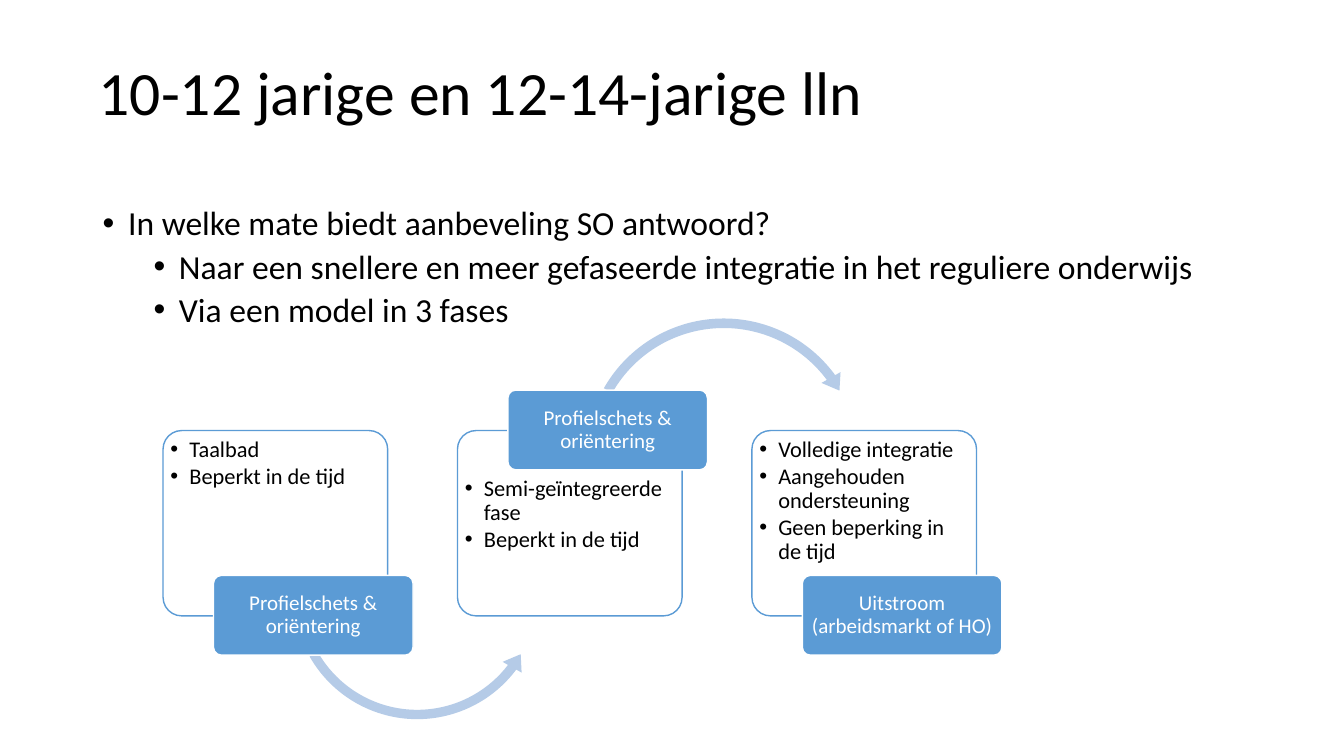
import pptx
import pptx.dml.color
import pptx.enum.shapes
import pptx.enum.text
import pptx.oxml.ns
import pptx.util
from lxml import etree

Cm = pptx.util.Cm
Pt = pptx.util.Pt
SHAPE = pptx.enum.shapes.MSO_SHAPE
ALIGN = pptx.enum.text.PP_ALIGN
ANCHOR = pptx.enum.text.MSO_ANCHOR
qn = pptx.oxml.ns.qn

BLACK = pptx.dml.color.RGBColor(0x00, 0x00, 0x00)
WHITE = pptx.dml.color.RGBColor(0xFF, 0xFF, 0xFF)
BLUE = pptx.dml.color.RGBColor(0x5B, 0x9B, 0xD5)
PALE_BLUE = pptx.dml.color.RGBColor(0xB5, 0xCB, 0xE7)
FONT = "Calibri"

TITLE = "10-12 jarige en 12-14-jarige lln"
QUESTION = "In welke mate biedt aanbeveling SO antwoord?"
ANSWERS = [
    "Naar een snellere en meer gefaseerde integratie in het reguliere onderwijs",
    "Via een model in 3 fases",
]
# Points, label, whether the label sits on top of the card
PHASES = [
    (["Taalbad", "Beperkt in de tijd"], "Profielschets & oriëntering", False),
    (["Semi-geïntegreerde fase", "Beperkt in de tijd"],
     "Profielschets & oriëntering", True),
    (["Volledige integratie", "Aangehouden ondersteuning",
      "Geen beperking in de tijd"], "Uitstroom (arbeidsmarkt of HO)", False),
]
PHASE_PITCH = Cm(7.42)
# Preset, offset from the card it leaves, diameter, adjustments
ARROWS = [
    (SHAPE.LEFT_CIRCULAR_ARROW, Cm(3.13), Cm(0.88), Cm(6.55),
     (0.036, 4.505, 22.26, 90.245, 0.042)),
    (SHAPE.CIRCULAR_ARROW, Cm(3.08), Cm(-2.98), Cm(7.26),
     (0.033, 4.022, 194.223, 125.755, 0.038)),
]


def write(frame, text, size, color=BLACK, align=ALIGN.LEFT, before=0, after=0,
          bullet_indent=None, hanging=0):
    """Add one paragraph, using the frame's first one while it is empty."""
    paragraph = frame.paragraphs[0] if not frame.text else frame.add_paragraph()
    paragraph.alignment = align
    paragraph.line_spacing = 0.9
    paragraph.space_before = Pt(before)
    paragraph.space_after = Pt(after)
    if bullet_indent is not None:
        properties = paragraph._p.get_or_add_pPr()
        properties.set("marL", str(bullet_indent))
        properties.set("indent", str(-hanging))
        etree.SubElement(properties, qn("a:buFont")).set("typeface", "Arial")
        etree.SubElement(properties, qn("a:buChar")).set("char", "•")
    run = paragraph.add_run()
    run.text = text
    run.font.name = FONT
    run.font.size = Pt(size)
    run.font.color.rgb = color


def set_frame(frame, anchor, side=Cm(0.25), top=Cm(0.13), bottom=Cm(0.13)):
    frame.word_wrap = True
    frame.vertical_anchor = anchor
    frame.margin_left = frame.margin_right = side
    frame.margin_top, frame.margin_bottom = top, bottom


def add_preset(slide, preset, box, fill, line=None, adjustments=()):
    shape = slide.shapes.add_shape(preset, *box)
    shape.shadow.inherit = False
    for index, value in enumerate(adjustments):
        shape.adjustments[index] = value
    shape.fill.solid()
    shape.fill.fore_color.rgb = fill
    if line is None:
        shape.line.fill.background()
    else:
        shape.line.color.rgb = line
        shape.line.width = Pt(1)
    return shape


def add_title(slide, box):
    frame = slide.shapes.add_textbox(*box).text_frame
    set_frame(frame, ANCHOR.MIDDLE)
    write(frame, TITLE, 44)


def add_body(slide, box):
    frame = slide.shapes.add_textbox(*box).text_frame
    set_frame(frame, ANCHOR.TOP)
    hanging = Cm(0.64)
    write(frame, QUESTION, 24, before=10, bullet_indent=hanging, hanging=hanging)
    for answer in ANSWERS:
        write(frame, answer, 24, before=5, bullet_indent=3 * hanging,
              hanging=hanging)


def add_card(slide, box, points, label_on_top):
    card = add_preset(slide, SHAPE.ROUNDED_RECTANGLE, box, WHITE, BLUE, [0.1])
    fill_color = card._element.spPr.find(qn("a:solidFill")).find(qn("a:srgbClr"))
    etree.SubElement(fill_color, qn("a:alpha")).set("val", "90000")
    set_frame(card.text_frame, ANCHOR.TOP, Cm(0.05),
              Cm(1.03) if label_on_top else Cm(0.05), Cm(0.05))
    for point in points:
        write(card.text_frame, point, 16, after=2, bullet_indent=Cm(0.48),
              hanging=Cm(0.48))


def add_label(slide, card_box, text, on_top):
    left, top = card_box[:2]
    offset = Cm(-1.02) if on_top else Cm(3.65)
    box = (left + Cm(1.27), top + offset, Cm(5.03), Cm(2.01))
    label = add_preset(slide, SHAPE.ROUNDED_RECTANGLE, box, BLUE, WHITE, [0.1])
    set_frame(label.text_frame, ANCHOR.MIDDLE, Cm(0.08), Cm(0.05), Cm(0.05))
    write(label.text_frame, text, 15, WHITE, ALIGN.CENTER)


def add_phases(slide, first_card):
    """Draw the phase cards to the right of each other, joined by arrows."""
    left, top, width, height = first_card
    for index, (points, label, on_top) in enumerate(PHASES):
        card_left = left + index * PHASE_PITCH
        card_box = (card_left, top, width, height)
        add_card(slide, card_box, points, on_top)
        if index < len(ARROWS):
            preset, dx, dy, diameter, adjustments = ARROWS[index]
            add_preset(slide, preset,
                       (card_left + dx, top + dy, diameter, diameter),
                       PALE_BLUE, adjustments=adjustments)
        add_label(slide, card_box, label, on_top)


def main():
    presentation = pptx.Presentation()
    presentation.slide_width = Cm(33.87)
    presentation.slide_height = Cm(19.05)
    slide = presentation.slides.add_slide(presentation.slide_layouts[6])
    add_title(slide, (Cm(2.24), Cm(0.56), Cm(29.21), Cm(3.68)))
    add_body(slide, (Cm(2.34), Cm(5.08), Cm(29.21), Cm(12.09)))
    add_phases(slide, (Cm(4.11), Cm(10.85), Cm(5.66), Cm(4.67)))
    presentation.save("out.pptx")


if __name__ == "__main__":
    main()
